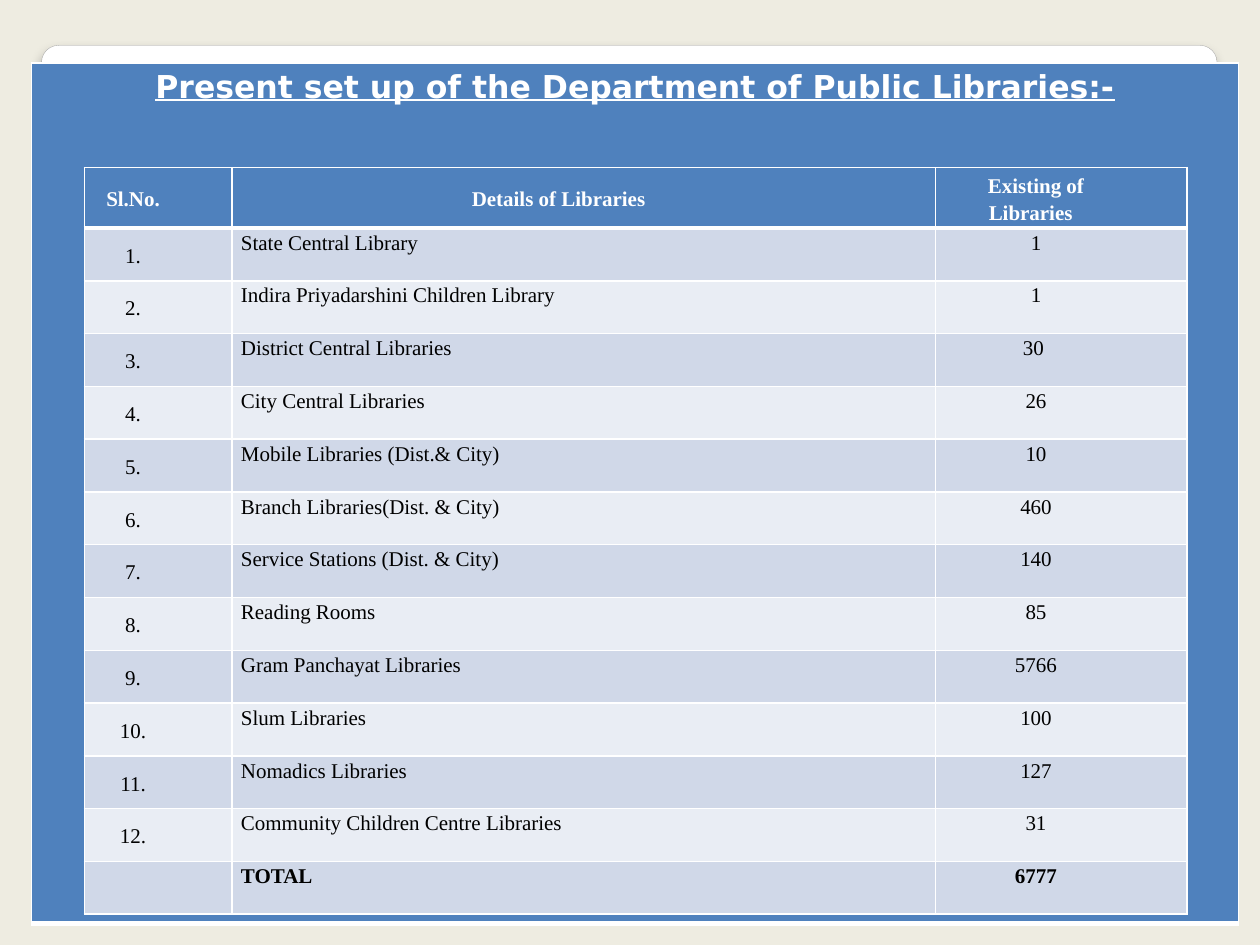
from lxml.etree import SubElement
from pptx import Presentation
from pptx.dml.color import RGBColor
from pptx.enum.shapes import MSO_SHAPE
from pptx.enum.text import MSO_ANCHOR, PP_ALIGN
from pptx.oxml.ns import qn
from pptx.util import Inches, Pt

BLUE, WHITE, BLACK = "4F81BD", "FFFFFF", "000000"
BANDS = ("D0D8E8", "E9EDF4")
HEADINGS = ("Sl.No.", "Details of Libraries", "Existing of Libraries  ")
LIBRARIES = (
    ("State Central Library", "1"),
    ("Indira Priyadarshini Children Library", "1"),
    ("District Central Libraries", "30 "),
    ("City Central Libraries", "26"),
    ("Mobile Libraries (Dist.& City)", "10"),
    ("Branch Libraries(Dist. & City)", "460"),
    ("Service Stations (Dist. & City)", "140"),
    ("Reading Rooms", "85"),
    ("Gram Panchayat Libraries", "5766"),
    ("Slum Libraries", "100"),
    ("Nomadics Libraries", "127"),
    ("Community Children Centre Libraries", "31"),
)
TOTAL = ("", "TOTAL", "6777")
COLUMN_SHARES = (0.134, 0.638, 0.228)
HEADER_HEIGHT = 0.48


def colour(hex_code):
    """Turn a hex string into a colour."""
    return RGBColor.from_string(hex_code)


def set_borders(cell, top=1, bottom=1):
    """Draw white borders round a cell, with widths in points."""
    properties = cell._tc.get_or_add_tcPr()
    for side, width in (("lnL", 1), ("lnR", 1), ("lnT", top), ("lnB", bottom)):
        line = SubElement(properties, qn(f"a:{side}"), w=str(Pt(width)))
        solid = SubElement(line, qn("a:solidFill"))
        SubElement(solid, qn("a:srgbClr"), val=WHITE)


def paint(cell, hex_code):
    """Fill a cell with one colour."""
    cell.fill.solid()
    cell.fill.fore_color.rgb = colour(hex_code)


def write(cell, text, font_name, size, hex_code, bold, align):
    """Write one formatted run in a cell and return its paragraph."""
    paragraph = cell.text_frame.paragraphs[0]
    paragraph.alignment = align
    run = paragraph.add_run()
    run.text = text
    run.font.name, run.font.size, run.font.bold = font_name, Pt(size), bold
    run.font.color.rgb = colour(hex_code)
    return paragraph


def add_plain_table(slide, box, row_count, column_count):
    """Add a table without header or banding styles."""
    table = slide.shapes.add_table(row_count, column_count, *map(Inches, box)).table
    table.first_row = table.horz_banding = False
    return table


def add_backdrop(slide, box):
    """Place the rounded white sheet with its soft shadow."""
    sheet = slide.shapes.add_shape(MSO_SHAPE.ROUNDED_RECTANGLE, *map(Inches, box))
    sheet.adjustments[0] = 0.02
    sheet.fill.gradient()
    sheet.fill.gradient_angle = 270
    for stop, position, hex_code in zip(
        sheet.fill.gradient_stops, (0.98, 1), (WHITE, "DADADA")
    ):
        stop.position = position
        stop.color.rgb = colour(hex_code)
    sheet.line.color.rgb = colour("A4A4A4")
    sheet.line.width = Pt(0.16)
    sheet.shadow.inherit = False
    effects = sheet._element.spPr.find(qn("a:effectLst"))
    shadow = SubElement(
        effects, qn("a:outerShdw"), blurRad=str(Pt(6)), dist=str(Pt(4)), dir="5400000"
    )
    shade = SubElement(shadow, qn("a:srgbClr"), val=BLACK)
    SubElement(shade, qn("a:alpha"), val="25000")


def add_title_panel(slide, box):
    """Place the blue panel that carries the title."""
    panel = add_plain_table(slide, box, 1, 1).cell(0, 0)
    set_borders(panel, bottom=3)
    paint(panel, BLUE)
    title = write(
        panel, "Present set up of the Department of Public Libraries:-",
        "DejaVu Sans", 18, WHITE, True, PP_ALIGN.CENTER,
    )
    title.runs[0].font.underline = True


def add_library_table(slide, box):
    """Place the table of libraries and their counts."""
    numbered = [(f"{n}.", *library) for n, library in enumerate(LIBRARIES, 1)]
    rows = [HEADINGS, *numbered, TOTAL]
    table = add_plain_table(slide, box, len(rows), len(HEADINGS))
    for column, share in zip(table.columns, COLUMN_SHARES):
        column.width = Inches(box[2] * share)
    body_height = (box[3] - HEADER_HEIGHT) / (len(rows) - 1)
    for r, entries in enumerate(rows):
        is_header = r == 0
        table.rows[r].height = Inches(HEADER_HEIGHT if is_header else body_height)
        for c, entry in enumerate(entries):
            cell = table.cell(r, c)
            is_name = c == 1 and not is_header
            set_borders(cell, top=3 if r == 1 else 1, bottom=3 if is_header else 1)
            paint(cell, BLUE if is_header else BANDS[(r - 1) % 2])
            cell.margin_left = Inches(0.07)
            cell.margin_right = Inches(0.07 if is_name else 0.47)
            cell.margin_top = cell.margin_bottom = 0
            if is_header or c == 0:
                cell.vertical_anchor = MSO_ANCHOR.MIDDLE
            if entry:
                paragraph = write(
                    cell, entry, "Times New Roman", 12,
                    WHITE if is_header else BLACK,
                    is_header or entries is TOTAL,
                    PP_ALIGN.LEFT if is_name else PP_ALIGN.CENTER,
                )
                paragraph.line_spacing = 1.15


def main():
    """Build and save the slide."""
    deck = Presentation()
    deck.slide_width, deck.slide_height = Inches(10), Inches(7.5)
    slide = deck.slides.add_slide(deck.slide_layouts[6])
    slide.background.fill.solid()
    slide.background.fill.fore_color.rgb = colour("EEECE1")
    add_backdrop(slide, (0.33, 0.36, 9.33, 6.78))
    add_title_panel(slide, (0.25, 0.5, 9.58, 6.83))
    add_library_table(slide, (0.67, 1.33, 8.75, 5.93))
    deck.save("out.pptx")


if __name__ == "__main__":
    main()
